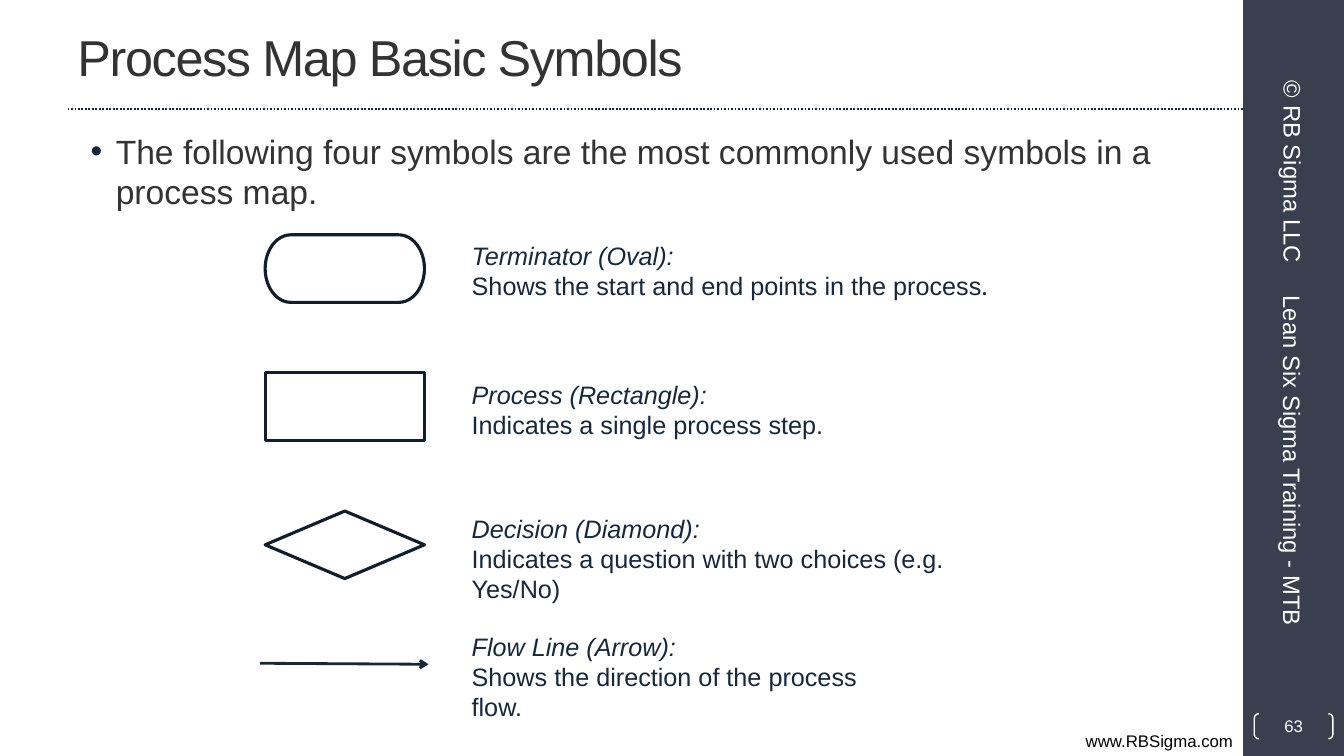
from lxml import etree
from pptx import Presentation
from pptx.dml.color import RGBColor
from pptx.enum.dml import MSO_LINE
from pptx.enum.shapes import MSO_CONNECTOR, MSO_SHAPE
from pptx.enum.text import MSO_ANCHOR, PP_ALIGN
from pptx.oxml.ns import qn
from pptx.util import Inches, Pt

NAVY, OUTLINE, GRAY, WHITE, BLACK = "18283B", "121E2C", "333333", "FFFFFF", "000000"
SIDEBAR, RULE = "393F4E", "17273B"

TITLE = "Process Map Basic Symbols"
INTRO = "The following four symbols are the most commonly used symbols in a process map."
SITE = "www.RBSigma.com"
PAGE_NUMBER = "63"
SIDE_LABELS = [
    ("Lean Six Sigma Training - MTB", (10.86, 4.53, 3.92, 0.53), PP_ALIGN.LEFT),
    ("© RB Sigma LLC", (11.7, 1.44, 2.25, 0.53), PP_ALIGN.CENTER),
]
SYMBOLS = [
    (MSO_SHAPE.FLOWCHART_TERMINATOR, 2.33),
    (MSO_SHAPE.FLOWCHART_PROCESS, 3.7),
    (MSO_SHAPE.FLOWCHART_DECISION, 5.07),
]
DESCRIPTIONS = [
    ("Terminator (Oval):", ["Shows the start and end points in the process", "."], (4.58, 2.33, 5.38, 0.71)),
    ("Process (Rectangle):", ["Indicates a single process step."], (4.58, 3.71, 4.58, 0.71)),
    ("Decision (Diamond):", ["Indicates a question with two choices (e.g. Yes/No)"], (4.58, 5.04, 5.46, 1.01)),
    ("Flow Line (Arrow):", ["Shows the direction of the process flow."], (4.58, 6.21, 4.5, 1.01)),
]


def color(value):
    return RGBColor.from_string(value)


def add_span(para, text, size, ink, **formats):
    span = para.add_run()
    span.text = text
    for name, value in {"name": "Arial", "size": Pt(size), **formats}.items():
        setattr(span.font, name, value)
    span.font.color.rgb = color(ink)
    return span


def add_box(page, place, anchor=MSO_ANCHOR.TOP):
    box = page.shapes.add_textbox(*map(Inches, place))
    box.text_frame.word_wrap = True
    box.text_frame.vertical_anchor = anchor
    return box


def add_outline(page, kind, place, ink, width):
    shape = page.shapes.add_shape(kind, *map(Inches, place))
    shape.shadow.inherit = False
    shape.fill.background()
    shape.line.color.rgb = color(ink)
    shape.line.width = Pt(width)
    return shape


def add_line(page, ends, ink, width):
    line = page.shapes.add_connector(MSO_CONNECTOR.STRAIGHT, *map(Inches, ends))
    line.line.color.rgb = color(ink)
    line.line.width = Pt(width)
    etree.SubElement(line._element.spPr, qn("a:effectLst"))
    return line


def add_bullet(para, ink):
    props = para._p.get_or_add_pPr()
    props.set("marL", str(Inches(0.38)))
    props.set("indent", str(Inches(-0.25)))
    bullet_color = etree.SubElement(props, qn("a:buClr"))
    etree.SubElement(bullet_color, qn("a:srgbClr"), val=ink)
    etree.SubElement(props, qn("a:buFont"), typeface="Arial")
    etree.SubElement(props, qn("a:buChar"), char="•")


def add_frame(page):
    sidebar = page.shapes.add_shape(MSO_SHAPE.RECTANGLE, *map(Inches, (12.33, 0, 1, 7.5)))
    sidebar.shadow.inherit = False
    sidebar.fill.solid()
    sidebar.fill.fore_color.rgb = color(SIDEBAR)
    sidebar.line.fill.background()
    rule = add_line(page, (0.67, 1.08, 12.33, 1.08), RULE, 1.25)
    rule.line.dash_style = MSO_LINE.ROUND_DOT
    site = add_box(page, (0, 7.2, 12.33, 0.3)).text_frame.paragraphs[0]
    site.alignment = PP_ALIGN.RIGHT
    add_span(site, SITE, 12, BLACK)
    for text, place, alignment in SIDE_LABELS:
        box = add_box(page, place, MSO_ANCHOR.MIDDLE)
        box.rotation = 90
        para = box.text_frame.paragraphs[0]
        para.alignment = alignment
        add_span(para, text, 17, WHITE)
    badge = add_outline(page, MSO_SHAPE.DOUBLE_BRACKET, (12.44, 7.08, 0.78, 0.25), WHITE, 1)
    badge.adjustments[0] = 0.18
    frame = badge.text_frame
    for side in ("left", "top", "right", "bottom"):
        setattr(frame, f"margin_{side}", 0)
    frame.vertical_anchor = MSO_ANCHOR.MIDDLE
    frame.paragraphs[0].alignment = PP_ALIGN.CENTER
    add_span(frame.paragraphs[0], PAGE_NUMBER, 12, WHITE)


def add_heading(page):
    title = add_box(page, (0.67, 0.03, 11.11, 1.05), MSO_ANCHOR.MIDDLE)
    span = add_span(title.text_frame.paragraphs[0], TITLE, 36, GRAY)
    span.font._element.set("spc", "-100")
    intro = add_box(page, (0.67, 1.25, 11.11, 6)).text_frame.paragraphs[0]
    add_bullet(intro, NAVY)
    add_span(intro, INTRO, 24, GRAY)


def add_symbols(page):
    for kind, top in SYMBOLS:
        add_outline(page, kind, (2.63, top, 1.58, 0.67), OUTLINE, 2.25)
    arrow = add_line(page, (2.58, 6.58, 4.25, 6.59), NAVY, 2)
    etree.SubElement(arrow.line._get_or_add_ln(), qn("a:tailEnd"), type="arrow")
    for name, meaning, place in DESCRIPTIONS:
        frame = add_box(page, place).text_frame
        add_span(frame.paragraphs[0], name, 18, NAVY, italic=True)
        para = frame.add_paragraph()
        for text in meaning:
            add_span(para, text, 18, NAVY, name="Lato" if text == "." else "Arial")


def main():
    deck = Presentation()
    deck.slide_width, deck.slide_height = Inches(13.33), Inches(7.5)
    page = deck.slides.add_slide(deck.slide_layouts[6])
    add_frame(page)
    add_heading(page)
    add_symbols(page)
    deck.save("out.pptx")


if __name__ == "__main__":
    main()
